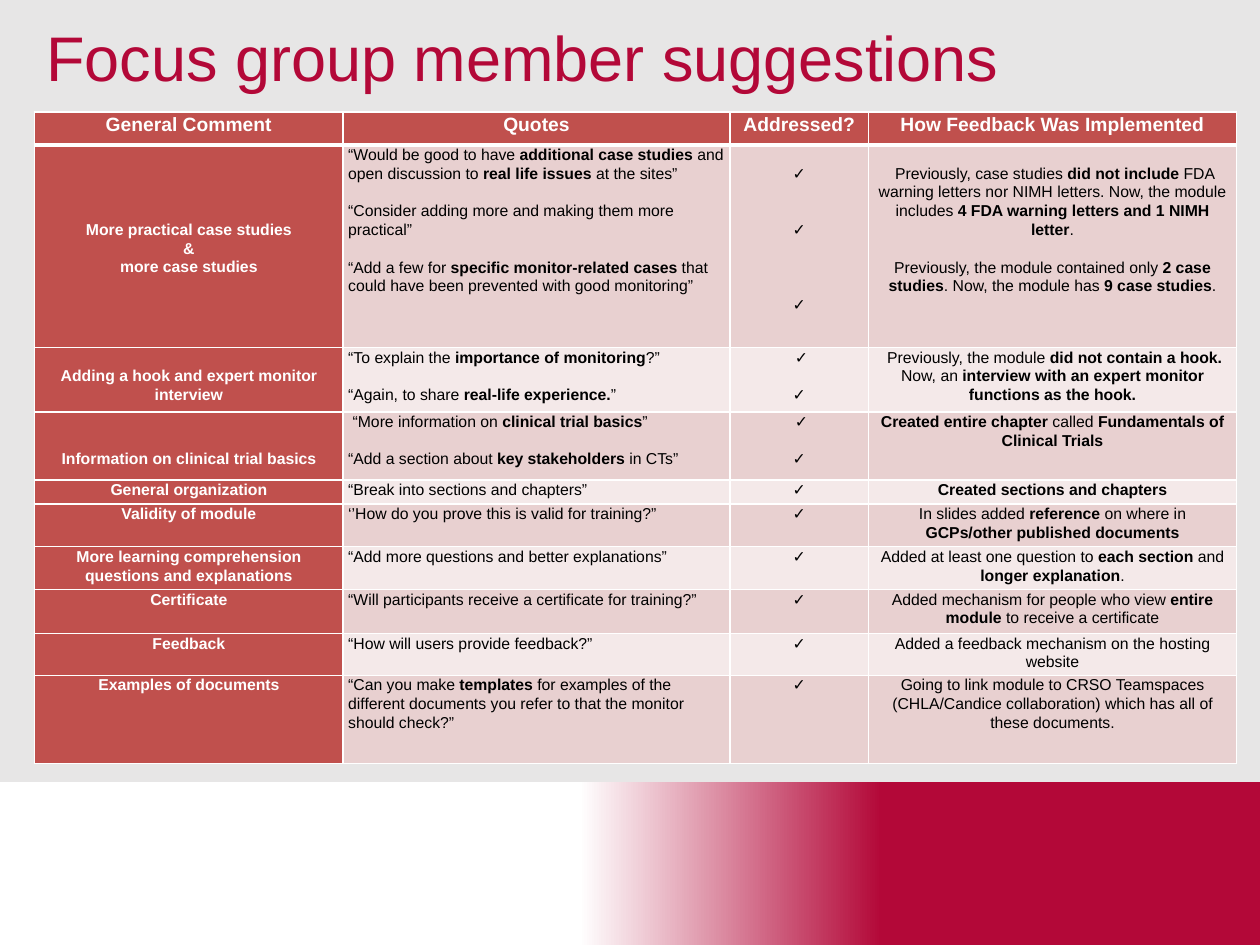
from dataclasses import dataclass

from lxml.etree import SubElement
from pptx import Presentation
from pptx.dml.color import RGBColor
from pptx.enum.shapes import MSO_SHAPE as Shape
from pptx.enum.text import MSO_ANCHOR as Anchor, PP_ALIGN as Align
from pptx.oxml.ns import qn
from pptx.util import Pt

FONT = "Arial"
CRIMSON, BRICK, WHITE, BLACK = "B30838", "C0504D", "FFFFFF", "000000"
BANDS = ("E8D0D0", "F4E9E9")
LINE = 10.7
COLUMN_WIDTHS = (176.4, 221, 79.3, 210.1)
ROW_HEIGHTS = (18.7, 115.9, 36.7, 38.9, 13.7, 24.5, 24.5, 25.2, 23.8, 50.4)
HEADERS = ("General Comment", "Quotes", "Addressed?", "How Feedback Was Implemented")


@dataclass
class Content:
    paragraphs: tuple
    gaps: tuple = ()
    lead: int = 0


FEEDBACK = (
    (
        Content(("More practical case studies", "&", "more case studies"), (0, 0), 4),
        Content((
            "“Would be good to have **additional case studies** and open discussion to "
            "**real life issues **at the sites”",
            "“Consider adding more and making them more practical”",
            "“Add a few for **specific monitor-related cases **that could have been "
            "prevented with good monitoring”",
        ), (1, 1)),
        Content(("✓", "✓", "✓"), (2, 3), 1),
        Content((
            " Previously, case studies **did not include **FDA warning letters nor NIMH "
            "letters. Now, the module includes **4 FDA warning letters and 1 NIMH letter**.",
            "Previously, the module contained only **2 case studies**. Now, the module has "
            "**9 case studies**.",
        ), (1,), 1),
    ),
    (
        Content(("Adding a hook and expert monitor interview",), lead=1),
        Content(("“To explain the **importance of monitoring**?”",
                 "“Again, to share **real-life experience.**”"), (1,)),
        Content((" ✓", "✓"), (1,)),
        " Previously, the module **did not contain a hook.** Now, an "
        "**interview with an expert monitor functions as the hook.**",
    ),
    (
        Content(("Information on clinical trial basics",), lead=2),
        Content((" “More information on **clinical trial basics**”",
                 "“Add a section about **key stakeholders** in CTs”"), (1,)),
        Content((" ✓", "✓"), (1,)),
        "**Created entire chapter **called **Fundamentals of Clinical Trials**",
    ),
    ("General organization", "“Break into sections and chapters”", "✓",
     "**Created sections and chapters**"),
    ("Validity of module", "‘’How do you prove this is valid for training?”", "✓",
     "In slides added **reference** on where in **GCPs/other published documents**"),
    ("More learning comprehension questions and explanations",
     "“Add more questions and better explanations”", "✓",
     "Added at least one question to **each section** and **longer explanation**."),
    ("Certificate", "“Will participants receive a certificate for training?”", "✓",
     "Added mechanism for people who view **entire module **to receive a certificate"),
    ("Feedback", "“How will users provide feedback?”", "✓",
     "Added a feedback mechanism on the hosting website"),
    ("Examples of documents",
     "“Can you make **templates** for examples of the different documents you refer to "
     "that the monitor should check?”", "✓",
     "Going to link module to CRSO Teamspaces (CHLA/Candice collaboration) which has "
     "all of these documents."),
)


def color(value):
    return RGBColor.from_string(value)


def add_run(paragraph, text, size, text_color, bold=False):
    run = paragraph.add_run()
    run.text = text
    run.font.name = FONT
    run.font.size = Pt(size)
    run.font.bold = bold
    run.font.color.rgb = color(text_color)


def add_marked_runs(paragraph, text, size, text_color, bold):
    for index, part in enumerate(text.split("**")):
        if part:
            add_run(paragraph, part, size, text_color, bold or index % 2 == 1)


def add_footer_band(slide):
    band = slide.shapes.add_shape(Shape.RECTANGLE, Pt(0), Pt(447.1), Pt(720), Pt(92.9))
    band.shadow.inherit = False
    band.line.fill.background()
    band.fill.gradient()
    band.fill.gradient_angle = 0
    stops = ((0.46, WHITE), (0.7, CRIMSON))
    for stop, (position, stop_color) in zip(band.fill.gradient_stops, stops):
        stop.position = position
        stop.color.rgb = color(stop_color)


def add_title(slide, text):
    box = slide.shapes.add_textbox(Pt(19.4), Pt(-17.3), Pt(640), Pt(104.4))
    frame = box.text_frame
    frame.word_wrap = True
    frame.vertical_anchor = Anchor.MIDDLE
    paragraph = frame.paragraphs[0]
    paragraph.line_spacing = 0.9
    add_run(paragraph, text, 36, CRIMSON)


def set_borders(cell, top=1, bottom=1):
    properties = cell._tc.get_or_add_tcPr()
    sides = (("lnL", 1), ("lnR", 1), ("lnT", top), ("lnB", bottom))
    for index, (side, width) in enumerate(sides):
        line = SubElement(properties, qn(f"a:{side}"), w=str(Pt(width)))
        fill = SubElement(line, qn("a:solidFill"))
        SubElement(fill, qn("a:srgbClr"), val=WHITE)
        properties.insert(index, line)


def fill_cell(cell, content, fill, size, text_color, bold, alignment):
    if isinstance(content, str):
        content = Content((content,))
    cell.fill.solid()
    cell.fill.fore_color.rgb = color(fill)
    cell.margin_left = cell.margin_right = Pt(2.9)
    cell.margin_top = Pt(content.lead * LINE)
    cell.margin_bottom = Pt(0)
    cell.vertical_anchor = Anchor.TOP
    frame = cell.text_frame
    for index, text in enumerate(content.paragraphs):
        paragraph = frame.add_paragraph() if index else frame.paragraphs[0]
        paragraph.alignment = alignment
        paragraph.line_spacing = 1.07
        if index and content.gaps[index - 1]:
            paragraph.space_before = Pt(content.gaps[index - 1] * LINE)
        add_marked_runs(paragraph, text, size, text_color, bold)


def add_feedback_table(slide):
    frame = slide.shapes.add_table(
        len(ROW_HEIGHTS), len(COLUMN_WIDTHS), Pt(19.7), Pt(64.1),
        Pt(sum(COLUMN_WIDTHS)), Pt(sum(ROW_HEIGHTS)))
    table = frame.table
    table.first_row = table.horz_banding = False
    for column, width in zip(table.columns, COLUMN_WIDTHS):
        column.width = Pt(width)
    for row, height in zip(table.rows, ROW_HEIGHTS):
        row.height = Pt(height)
    for column, text in enumerate(HEADERS):
        cell = table.cell(0, column)
        fill_cell(cell, text, BRICK, 11, WHITE, True, Align.CENTER)
        set_borders(cell, bottom=3)
    for row, contents in enumerate(FEEDBACK, 1):
        for column, content in enumerate(contents):
            cell = table.cell(row, column)
            is_label = column == 0
            fill_cell(
                cell, content,
                fill=BRICK if is_label else BANDS[(row - 1) % 2],
                size=9,
                text_color=WHITE if is_label else BLACK,
                bold=column in (0, 2),
                alignment=Align.LEFT if column == 1 else Align.CENTER)
            set_borders(cell, top=3 if row == 1 else 1)


def main():
    presentation = Presentation()
    presentation.slide_width, presentation.slide_height = Pt(720), Pt(540)
    slide = presentation.slides.add_slide(presentation.slide_layouts[6])
    slide.background.fill.solid()
    slide.background.fill.fore_color.rgb = color("E7E6E6")
    add_footer_band(slide)
    add_title(slide, "Focus group member suggestions")
    add_feedback_table(slide)
    presentation.save("out.pptx")


if __name__ == "__main__":
    main()
